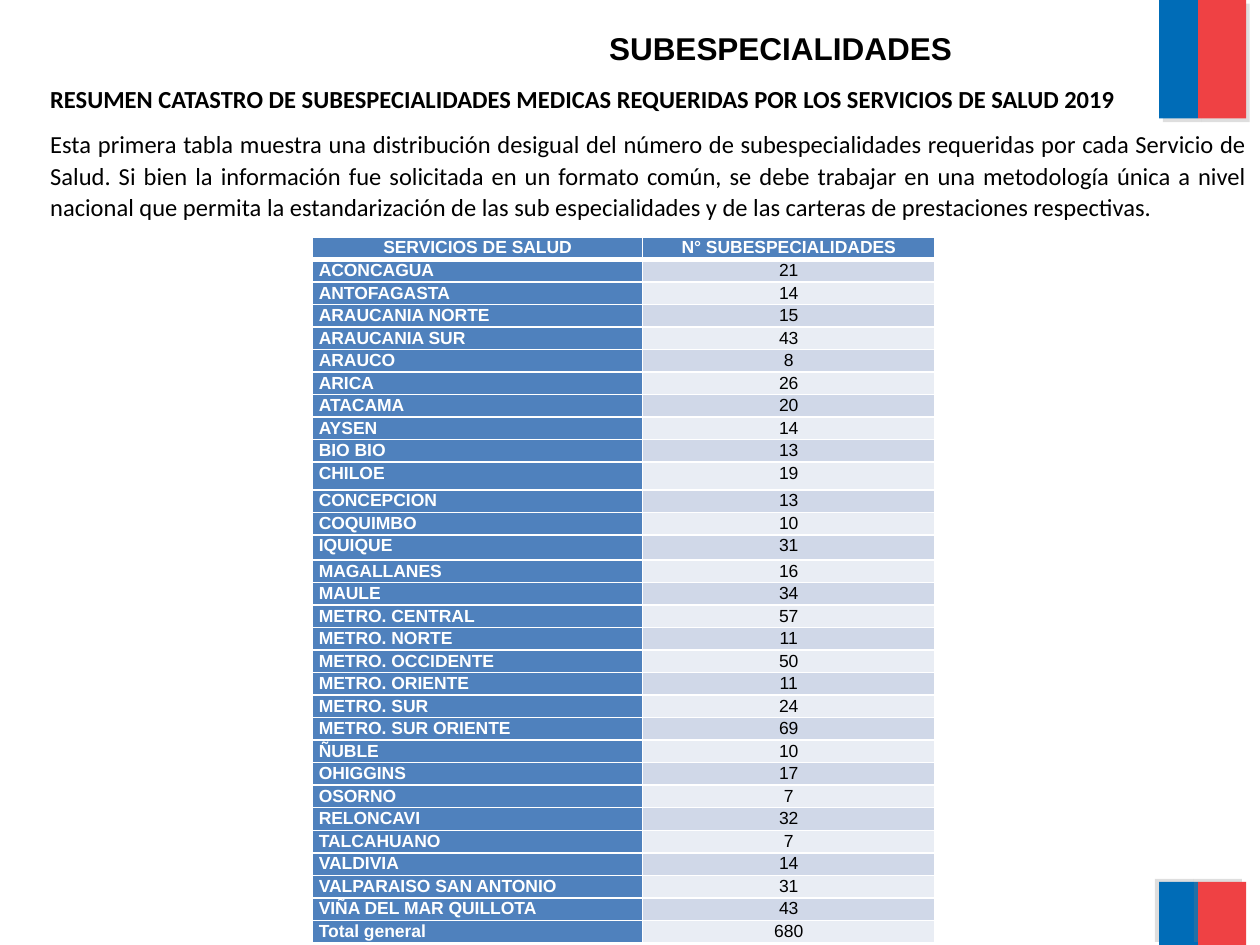
from lxml import etree
from pptx import Presentation
from pptx.dml.color import RGBColor
from pptx.enum.shapes import MSO_SHAPE
from pptx.enum.text import MSO_AUTO_SIZE, PP_ALIGN
from pptx.oxml import parse_xml
from pptx.oxml.ns import nsdecls, qn
from pptx.util import Inches, Pt

BLACK = RGBColor(0x00, 0x00, 0x00)
WHITE = RGBColor(0xFF, 0xFF, 0xFF)
FLAG_BLUE = RGBColor(0x00, 0x6C, 0xB7)
FLAG_RED = RGBColor(0xEF, 0x41, 0x44)
SHADOW_GRAY = RGBColor(0x80, 0x80, 0x80)
HEADER_BLUE = RGBColor(0x4F, 0x81, 0xBD)
BAND_DARK = RGBColor(0xD0, 0xD8, 0xE8)
BAND_LIGHT = RGBColor(0xE9, 0xED, 0xF4)

HEADINGS = ("SERVICIOS DE SALUD", "N° SUBESPECIALIDADES")
SERVICES = [
    ("ACONCAGUA", 21), ("ANTOFAGASTA", 14), ("ARAUCANIA NORTE", 15),
    ("ARAUCANIA SUR", 43), ("ARAUCO", 8), ("ARICA", 26), ("ATACAMA", 20),
    ("AYSEN", 14), ("BIO BIO", 13), ("CHILOE", 19), ("CONCEPCION", 13),
    ("COQUIMBO", 10), ("IQUIQUE", 31), ("MAGALLANES", 16), ("MAULE", 34),
    ("METRO. CENTRAL", 57), ("METRO. NORTE", 11), ("METRO. OCCIDENTE", 50),
    ("METRO. ORIENTE", 11), ("METRO. SUR", 24), ("METRO. SUR ORIENTE", 69),
    ("ÑUBLE", 10), ("OHIGGINS", 17), ("OSORNO", 7), ("RELONCAVI", 32),
    ("TALCAHUANO", 7), ("VALDIVIA", 14), ("VALPARAISO SAN ANTONIO", 31),
    ("VIÑA DEL MAR QUILLOTA", 43), ("Total general", 680),
]
TALL_ROWS = {"CHILOE": 0.22, "IQUIQUE": 0.2}


def write_text(paragraph, text, size=10, font="Arial", color=BLACK, bold=False,
               align=PP_ALIGN.CENTER, line_spacing=1.07, space_after=0):
    paragraph.alignment = align
    paragraph.line_spacing = line_spacing
    paragraph.space_after = Pt(space_after)
    run = paragraph.add_run()
    run.text = text
    run.font.size = Pt(size)
    run.font.name = font
    run.font.bold = bold
    run.font.color.rgb = color


def set_borders(cell, widths):
    properties = cell._tc.get_or_add_tcPr()
    for index, (side, width) in enumerate(widths.items()):
        properties.insert(index, parse_xml(
            f'<a:ln{side} {nsdecls("a")} w="{Pt(width)}"><a:solidFill>'
            f'<a:srgbClr val="{WHITE}"/></a:solidFill></a:ln{side}>'))


presentation = Presentation()
presentation.slide_width = Inches(10)
presentation.slide_height = Inches(7.5)
slide = presentation.slides.add_slide(presentation.slide_layouts[6])

STRIPES = [
    (9.2, -0.01, 0.31, 0.95, FLAG_BLUE, 45),
    (9.51, 0, 0.38, 0.94, FLAG_RED, 45),
    (9.2, 7, 0.31, 0.5, FLAG_BLUE, 215),
    (9.51, 7, 0.38, 0.5, FLAG_RED, 215),
]
for left, top, width, height, color, angle in STRIPES:
    stripe = slide.shapes.add_shape(
        MSO_SHAPE.RECTANGLE, Inches(left), Inches(top), Inches(width), Inches(height))
    stripe.fill.solid()
    stripe.fill.fore_color.rgb = color
    stripe.line.fill.background()
    stripe.shadow.inherit = False
    effects = stripe._element.spPr.find(qn("a:effectLst"))
    shadow = etree.SubElement(effects, qn("a:outerShdw"), blurRad="0",
                              dist=str(Pt(3)), dir=str(angle * 60000), rotWithShape="0")
    shadow_color = etree.SubElement(shadow, qn("a:srgbClr"), val=str(SHADOW_GRAY))
    etree.SubElement(shadow_color, qn("a:alpha"), val="25000")

title = slide.shapes.add_textbox(Inches(3.04), Inches(0.18), Inches(6.31), Inches(0.4))
title.text_frame.word_wrap = True
title.text_frame.auto_size = MSO_AUTO_SIZE.SHAPE_TO_FIT_TEXT
write_text(title.text_frame.paragraphs[0], "SUBESPECIALIDADES", size=18, bold=True,
           line_spacing=1.0)

summary = slide.shapes.add_textbox(Inches(0.3), Inches(0.6), Inches(9.7), Inches(1.22))
summary.text_frame.word_wrap = True
summary.text_frame.auto_size = MSO_AUTO_SIZE.SHAPE_TO_FIT_TEXT
summary_format = dict(size=14, font="Calibri", align=PP_ALIGN.JUSTIFY, space_after=8)
write_text(
    summary.text_frame.paragraphs[0],
    "RESUMEN CATASTRO DE SUBESPECIALIDADES MEDICAS REQUERIDAS POR LOS SERVICIOS DE SALUD 2019",
    bold=True, **summary_format)
write_text(
    summary.text_frame.add_paragraph(),
    "Esta primera tabla muestra una distribución desigual del número de subespecialidades "
    "requeridas por cada Servicio de Salud. Si bien la información fue solicitada en un formato "
    "común, se debe trabajar en una metodología única a nivel nacional que permita la "
    "estandarización de las sub especialidades y de las carteras de prestaciones respectivas.",
    **summary_format)

rows = [HEADINGS] + SERVICES
table = slide.shapes.add_table(
    len(rows), 2, Inches(2.48), Inches(1.88), Inches(4.94), Inches(5.59)).table
table.columns[0].width = Inches(2.62)
table.columns[1].width = Inches(2.32)

for row_index, row in enumerate(rows):
    table.rows[row_index].height = Inches(TALL_ROWS.get(row[0], 0.16))
    for column_index, value in enumerate(row):
        is_header = row_index == 0
        is_label = is_header or column_index == 0
        cell = table.cell(row_index, column_index)
        cell.margin_left = cell.margin_right = Inches(0.05)
        cell.margin_top = cell.margin_bottom = 0
        cell.fill.solid()
        band = BAND_DARK if row_index % 2 else BAND_LIGHT
        cell.fill.fore_color.rgb = HEADER_BLUE if is_label else band
        set_borders(cell, {"L": 1, "R": 1, "T": 3 if row_index == 1 else 1,
                           "B": 3 if is_header else 1})
        write_text(cell.text_frame.paragraphs[0], str(value), bold=is_label,
                   color=WHITE if is_label else BLACK,
                   align=PP_ALIGN.LEFT if is_label and not is_header else PP_ALIGN.CENTER)

presentation.save("out.pptx")
